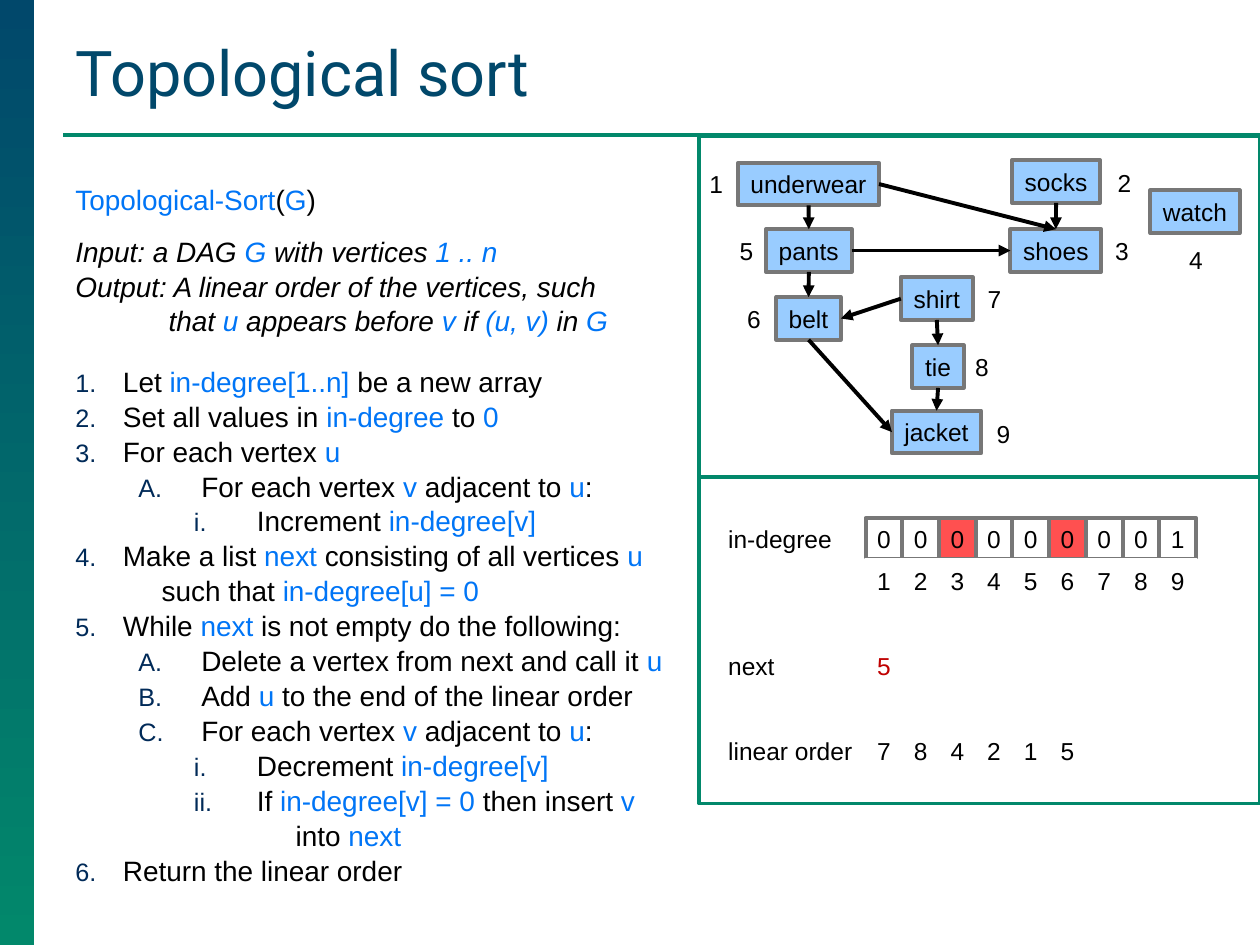
from lxml.etree import SubElement
from pptx import Presentation
from pptx.dml.color import RGBColor
from pptx.enum.shapes import MSO_CONNECTOR, MSO_SHAPE
from pptx.enum.text import MSO_ANCHOR, MSO_AUTO_SIZE, PP_ALIGN
from pptx.oxml.ns import qn
from pptx.util import Cm, Pt

NAVY, GREEN, BLUE, BLACK = "01486B", "02886B", "0075F6", "000000"
WHITE, GRAY, SKY, RED, DARK_RED = "FFFFFF", "777777", "99CCFF", "FF5050", "C00000"
BULLET = "002A58"
TOP, LEFT, BOTTOM, RIGHT = range(4)

HEADING = "|Topological-Sort|(|G|)"
SPECIFICATION = [
    ("Input: a DAG |G| with vertices |1 .. n", 0, 9.5),
    ("Output: A linear order of the vertices, such", 0, 0),
    ("that |u| appears before |v| if |(u, v) |in |G", 1.88, 0),
]
INDENTS = [(0.96, -0.96), (2.54, -1.27), (3.66, -1.27)]
SCHEMES = ["arabicPeriod", "alphaUcPeriod", "romanLcPeriod"]
STEPS = [
    (0, 1, "Let |in-degree[1..n] |be a new array", None),
    (0, 2, "Set all values in |in-degree |to| 0", None),
    (0, 3, "For each vertex |u", None),
    (1, 1, "For each vertex |v |adjacent to |u|:", None),
    (2, 1, "Increment| in-degree[v]", None),
    (0, 4, "Make a list |next |consisting of all vertices |u", "such that |in-degree[u] = 0"),
    (0, 5, "While| next |is not empty do the following:", None),
    (1, 1, "Delete a vertex from next and call it |u", None),
    (1, 2, "Add| u |to the end of the linear order", None),
    (1, 3, "For each vertex |v |adjacent to |u|:", None),
    (2, 1, "Decrement| in-degree[v]", None),
    (2, 2, "If| in-degree[v] = 0 |then insert |v", "into| next"),
    (0, 6, "Return the linear order", None),
]

PANELS = [(14.1, 9.6, 11.3, 6.6), (14.1, 2.74, 11.3, 6.88)]
NODES = [
    ("underwear", 14.88, 3.28, 2.84, "1", 14.05, 3.28),
    ("pants", 15.44, 4.62, 1.73, "5", 14.66, 4.62),
    ("belt", 15.65, 5.99, 1.3, "6", 14.81, 5.99),
    ("socks", 20.4, 3.23, 1.78, "2", 22.28, 3.25),
    ("shoes", 20.37, 4.62, 1.83, "3", 22.23, 4.62),
    ("shirt", 18.16, 5.59, 1.45, "7", 19.66, 5.59),
    ("tie", 18.39, 6.96, 1.04, "8", 19.41, 6.96),
    ("jacket", 17.98, 8.28, 1.8, "9", 19.84, 8.31),
    ("watch", 23.19, 3.84, 1.8, "4", 23.72, 4.8),
]
EDGES = [
    ("underwear", RIGHT, "shoes", TOP),
    ("socks", BOTTOM, "shoes", TOP),
    ("underwear", BOTTOM, "pants", TOP),
    ("pants", BOTTOM, "belt", TOP),
    ("shirt", LEFT, "belt", RIGHT),
    ("shirt", BOTTOM, "tie", TOP),
    ("tie", BOTTOM, "jacket", TOP),
    ("belt", BOTTOM, "jacket", LEFT),
    ("pants", RIGHT, "shoes", LEFT),
]
ROWS = [
    ("in-degree", 10.44, "000000001", GRAY, BLACK),
    ("", 11.28, "123456789", WHITE, BLACK),
    ("next", 13, "5", WHITE, DARK_RED),
    ("linear order", 14.71, "784215", WHITE, BLACK),
]
CHANGED = {2, 5}
CELL_X, CELL_W, CELL_H, NODE_H = 17.45, 0.74, 0.84, 0.86


def rgb(color):
    return RGBColor.from_string(color)


def set_font(r, size, color, name="Arial", italic=False):
    r.font.size, r.font.name, r.font.italic = Pt(size), name, italic
    r.font.color.rgb = rgb(color)


def put_text(s, text, color=BLACK, align=PP_ALIGN.CENTER):
    tf = s.text_frame
    tf.text = text
    tf.word_wrap = False
    tf.vertical_anchor = MSO_ANCHOR.MIDDLE
    p = tf.paragraphs[0]
    p.alignment = align
    set_font(p.runs[0], 14, color)


def add_box(x, y, w, h, fill, line):
    s = shapes.add_shape(MSO_SHAPE.RECTANGLE, Cm(x), Cm(y), Cm(w), Cm(h))
    s.shadow.inherit = False
    s.fill.solid()
    s.fill.fore_color.rgb = rgb(fill)
    s.line.color.rgb = rgb(line)
    s.line.width = Pt(2.25)
    return s


def add_label(text, x, y, w):
    put_text(shapes.add_textbox(Cm(x), Cm(y), Cm(w), Cm(NODE_H)), text, align=PP_ALIGN.LEFT)


def add_line(color, x1=0, y1=0, x2=0, y2=0):
    c = shapes.add_connector(MSO_CONNECTOR.STRAIGHT, Cm(x1), Cm(y1), Cm(x2), Cm(y2))
    c.line.color.rgb = rgb(color)
    c.line.width = Pt(2.25)
    SubElement(c._element.spPr, qn("a:effectLst"))
    return c


def add_paragraph(tf, text, left=0, hanging=0, before=0, italic=False, number=None):
    p = tf.add_paragraph() if tf.text else tf.paragraphs[0]
    p.line_spacing = 1.04
    p.space_before = Pt(before)
    pPr = p._p.get_or_add_pPr()
    pPr.set("marL", str(Cm(left)))
    pPr.set("indent", str(Cm(hanging)))
    if number:
        scheme, start = number
        SubElement(SubElement(pPr, qn("a:buClr")), qn("a:srgbClr"), val=BULLET)
        SubElement(pPr, qn("a:buSzPct"), val="90000")
        SubElement(pPr, qn("a:buFont"), typeface="Arial")
        SubElement(pPr, qn("a:buAutoNum"), type=scheme, startAt=str(start))
    for i, part in enumerate(text.split("|")):
        if part:
            r = p.add_run()
            r.text = part
            set_font(r, 16, BLUE if i % 2 else BLACK, italic=italic)


prs = Presentation()
prs.slide_width, prs.slide_height = Cm(25.4), Cm(19.05)
slide = prs.slides.add_slide(prs.slide_layouts[5])
shapes = slide.shapes

title = shapes.title
title.left, title.top, title.width, title.height = Cm(1.27), Cm(0.53), Cm(23.57), Cm(1.8)
tf = title.text_frame
tf.text = "Topological sort"
tf.auto_size = MSO_AUTO_SIZE.NONE
tf.vertical_anchor = MSO_ANCHOR.BOTTOM
tf.paragraphs[0].alignment = PP_ALIGN.LEFT
set_font(tf.paragraphs[0].runs[0], 36, NAVY, "Roboto")

bar = add_box(0, 0, 0.69, 19.05, NAVY, NAVY)
bar.line.fill.background()
bar.fill.gradient()
bar.fill.gradient_angle = 270
for stop, color in zip(bar.fill.gradient_stops, (NAVY, GREEN)):
    stop.color.rgb = rgb(color)
add_line(GREEN, 1.27, 2.72, 25.4, 2.72)
for panel in PANELS:
    add_box(*panel, WHITE, GREEN)

tf = shapes.add_textbox(Cm(1.27), Cm(3.53), Cm(12.4), Cm(15.52)).text_frame
tf.word_wrap = True
tf.margin_right = 0
add_paragraph(tf, HEADING)
for text, left, before in SPECIFICATION:
    add_paragraph(tf, text, left, before=before, italic=True)
for i, (level, start, text, continuation) in enumerate(STEPS):
    left, hanging = INDENTS[level]
    add_paragraph(tf, text, left, hanging, 0 if i else 14.5, number=(SCHEMES[level], start))
    if continuation:
        add_paragraph(tf, continuation, left + 0.78)

for label, y, values, border, color in ROWS:
    if label:
        add_label(label, 14.43, y, 3.15)
    for i, value in enumerate(values):
        fill = RED if label == "in-degree" and i in CHANGED else WHITE
        put_text(add_box(CELL_X + i * CELL_W, y, CELL_W, CELL_H, fill, border), value, color)

nodes = {}
for name, x, y, w, number, number_x, number_y in NODES:
    nodes[name] = add_box(x, y, w, NODE_H, SKY, GRAY)
    put_text(nodes[name], name)
    add_label(number, number_x, number_y, 0.79)
for start, start_side, end, end_side in EDGES:
    c = add_line(BLACK)
    c.begin_connect(nodes[start], start_side)
    c.end_connect(nodes[end], end_side)
    SubElement(c.line._get_or_add_ln(), qn("a:tailEnd"), type="triangle")

prs.save("out.pptx")
